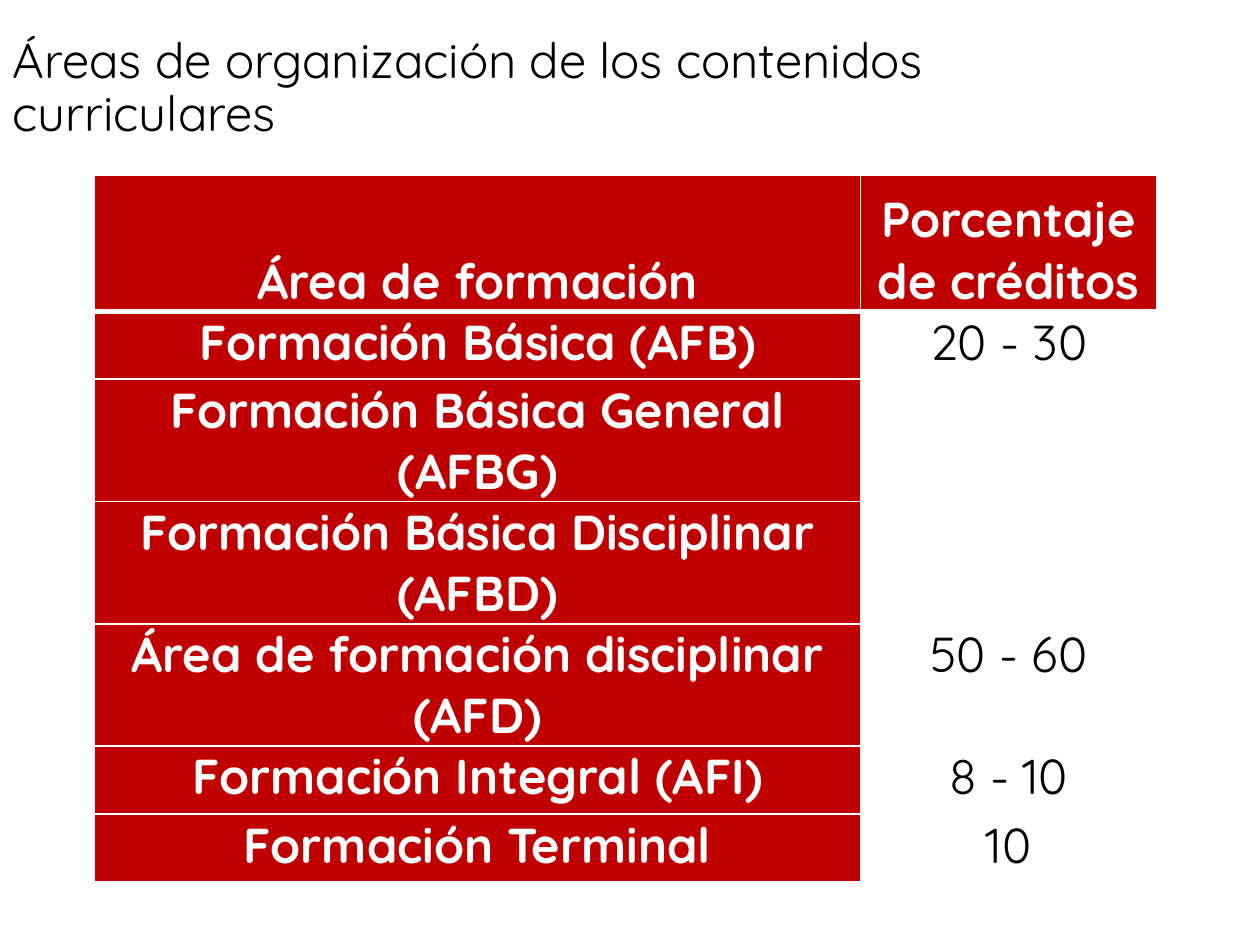
from lxml.etree import SubElement
from pptx import Presentation
from pptx.dml.color import RGBColor
from pptx.enum.text import MSO_ANCHOR as ANCHOR, PP_ALIGN as ALIGN
from pptx.oxml.ns import qn
from pptx.util import Inches, Pt

FONT = "Quicksand"
RED, WHITE, BLACK = "C00000", "FFFFFF", "000000"
COLS = [6.08, 2.35]
HEIGHTS = [1.08, 0.54, 0.83, 0.83, 0.83, 0.54, 0.54]
ROWS = [
    ("Área de formación", "Porcentaje de créditos"),
    ("Formación Básica (AFB)", "20 - 30"),
    ("Formación Básica General (AFBG)", ""),
    ("Formación Básica Disciplinar (AFBD)", ""),
    ("Área de formación disciplinar (AFD)", "50 - 60"),
    ("Formación Integral (AFI)", "8 - 10"),
    ("Formación Terminal", "10"),
]


def rgb(color):
    """Turn a hex string into a colour."""
    return RGBColor.from_string(color)


def format_text(p, color, **values):
    """Set the font and alignment of a paragraph."""
    p.font.color.rgb = rgb(color)
    for name, value in {"name": FONT, "size": Pt(28), "bold": False, **values}.items():
        setattr(p.font, name, value)


def add_borders(cell, bottom):
    """Draw white borders round a cell, the bottom one of a given width."""
    tcPr = cell._tc.get_or_add_tcPr()
    for i, (side, width) in enumerate([("L", 1), ("R", 1), ("T", 1), ("B", bottom)]):
        ln = SubElement(tcPr, qn(f"a:ln{side}"), w=str(Pt(width)))
        fill = SubElement(ln, qn("a:solidFill"))
        SubElement(fill, qn("a:srgbClr"), val=WHITE)
        tcPr.remove(ln)
        tcPr.insert(i, ln)


def fill_cell(cell, text, is_label, is_header):
    """Write and format one table cell."""
    margins = {"margin_left": 0.07, "margin_right": 0.07, "margin_top": 0, "margin_bottom": 0}
    for name, value in margins.items():
        setattr(cell, name, Inches(value))
    cell.vertical_anchor = ANCHOR.BOTTOM if is_header else ANCHOR.TOP
    cell.fill.solid()
    cell.fill.fore_color.rgb = rgb(RED if is_label else WHITE)
    add_borders(cell, 3 if is_header else 1)
    cell.text = text
    p = cell.text_frame.paragraphs[0]
    p.alignment = ALIGN.CENTER
    format_text(p, WHITE if is_label else BLACK, bold=is_label)


def add_title(slide, left, top, width, height):
    """Place and format the title."""
    title = slide.shapes.title
    box = {"left": left, "top": top, "width": width, "height": height}
    for name, value in box.items():
        setattr(title, name, Inches(value))
    tf = title.text_frame
    tf.text = "Áreas de organización de los contenidos curriculares"
    tf.word_wrap = True
    tf.vertical_anchor = ANCHOR.MIDDLE
    p = tf.paragraphs[0]
    p.alignment = ALIGN.LEFT
    p.line_spacing = 0.9
    format_text(p, BLACK)


def add_credit_table(slide, left, top):
    """Build the table of training areas and credit percentages."""
    box = [Inches(v) for v in (left, top, sum(COLS), sum(HEIGHTS))]
    table = slide.shapes.add_table(len(ROWS), len(COLS), *box).table
    table.horz_banding = False
    for column, width in zip(table.columns, COLS):
        column.width = Inches(width)
    for row, height in zip(table.rows, HEIGHTS):
        row.height = Inches(height)
    for r, texts in enumerate(ROWS):
        for c, text in enumerate(texts):
            fill_cell(table.cell(r, c), text, r == 0 or c == 0, r == 0)
    table.cell(1, 1).merge(table.cell(2, 1))


def main():
    """Build and save the slide."""
    prs = Presentation()
    prs.slide_width, prs.slide_height = Inches(10), Inches(7.5)
    slide = prs.slides.add_slide(prs.slide_layouts[5])
    add_title(slide, 0, 0.27, 9, 0.88)
    add_credit_table(slide, 0.75, 1.39)
    prs.save("out.pptx")


if __name__ == "__main__":
    main()
